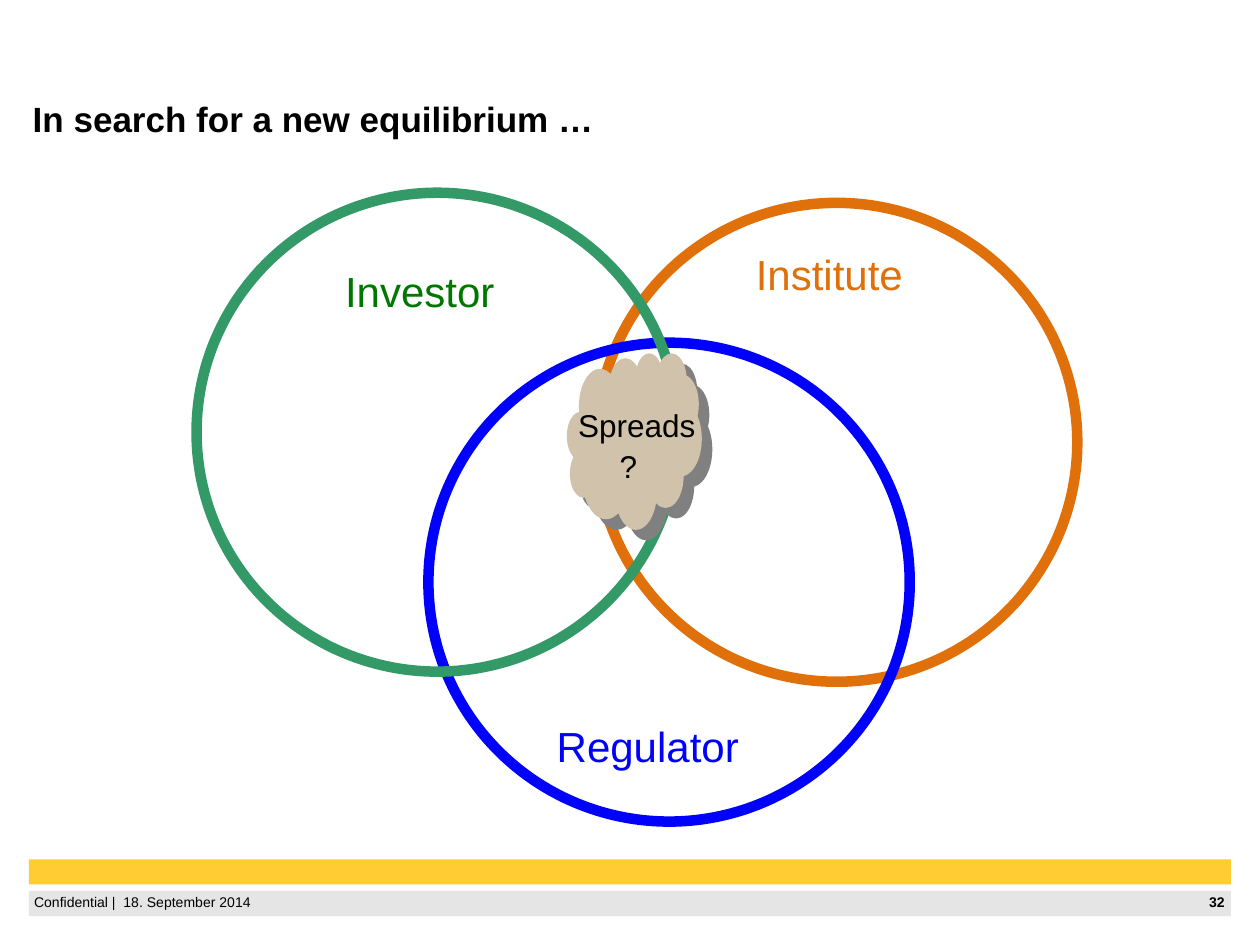
from dataclasses import dataclass

from lxml.etree import SubElement
from pptx import Presentation
from pptx.dml.color import RGBColor
from pptx.enum.shapes import MSO_SHAPE
from pptx.enum.text import MSO_ANCHOR, MSO_AUTO_SIZE, PP_ALIGN
from pptx.oxml.ns import qn
from pptx.util import Inches, Pt


@dataclass(frozen=True)
class Theme:
    """Fonts, type sizes and colours of the slide."""
    font: str = "Arial"
    title_size: int = 20
    label_size: int = 24
    cloud_size: int = 18
    footer_size: int = 8
    ring_width: int = 6
    line_spacing: float = 1.1
    text: str = "000000"
    investor_ring: str = "339966"
    investor_text: str = "007700"
    institute: str = "E0700A"
    regulator: str = "0000FF"
    cloud: str = "D1C3AB"
    cloud_shadow: str = "808080"
    accent_bar: str = "FFCC33"
    footer_bar: str = "E5E5E5"


THEME = Theme()
SLIDE_WIDTH, SLIDE_HEIGHT = Inches(10), Inches(7.5)
RING_SIZE = (38.2, 50.67)
BAR_SIZE = (95.4, 2.67)


def place(left, top, width, height):
    """Turn percentages of the slide into a position and size."""
    return (int(SLIDE_WIDTH * left / 100), int(SLIDE_HEIGHT * top / 100),
            int(SLIDE_WIDTH * width / 100), int(SLIDE_HEIGHT * height / 100))


def write(frame, text, size, color, bold=False, align=PP_ALIGN.LEFT):
    """Write one formatted run and return its paragraph."""
    frame.word_wrap = True
    frame.auto_size = MSO_AUTO_SIZE.NONE
    paragraph = frame.paragraphs[0]
    paragraph.alignment = align
    run = paragraph.add_run()
    run.text = text
    run.font.name = THEME.font
    run.font.size = Pt(size)
    run.font.bold = bold
    run.font.color.rgb = RGBColor.from_string(color)
    return paragraph


def add_title(slide, text):
    """Place and format the title placeholder."""
    title = slide.shapes.title
    title.left, title.top, title.width, title.height = place(1.6, 9.2, 96.6, 7.33)
    title.text_frame.vertical_anchor = MSO_ANCHOR.TOP
    paragraph = write(title.text_frame, text, THEME.title_size, THEME.text, bold=True)
    paragraph.line_spacing = THEME.line_spacing


def add_label(slide, box, text, size, color):
    """Add a label whose wrapped lines hang to the right."""
    label = slide.shapes.add_textbox(*place(*box))
    paragraph = write(label.text_frame, text, size, color)
    paragraph.line_spacing = THEME.line_spacing
    properties = paragraph._p.get_or_add_pPr()
    properties.set("marL", str(Inches(0.33)))
    properties.set("indent", str(Inches(-0.33)))


def add_footer_text(slide, box, text, bold, align):
    """Add a line of footer text without margins."""
    footer = slide.shapes.add_textbox(*place(*box))
    frame = footer.text_frame
    frame.margin_left = frame.margin_right = frame.margin_top = frame.margin_bottom = 0
    frame.vertical_anchor = MSO_ANCHOR.MIDDLE
    write(frame, text, THEME.footer_size, THEME.text, bold, align)


def add_filled_shape(slide, kind, box, color):
    """Add a filled shape without outline or shadow."""
    shape = slide.shapes.add_shape(kind, *place(*box))
    shape.shadow.inherit = False
    shape.fill.solid()
    shape.fill.fore_color.rgb = RGBColor.from_string(color)
    shape.line.fill.background()
    return shape


def add_ring(slide, left, top, color):
    """Add an unfilled circle with a thick outline."""
    ring = slide.shapes.add_shape(MSO_SHAPE.OVAL, *place(left, top, *RING_SIZE))
    ring.shadow.inherit = False
    ring.fill.background()
    ring.line.color.rgb = RGBColor.from_string(color)
    ring.line.width = Pt(THEME.ring_width)


def add_shadow(shape, color):
    """Cast a hard shadow down and to the right."""
    effects = shape._element.spPr.find(qn("a:effectLst"))
    shadow = SubElement(effects, qn("a:outerShdw"), blurRad="0", dist=str(Pt(8.5)),
                        dir=str(45 * 60000), algn="ctr", rotWithShape="0")
    SubElement(shadow, qn("a:srgbClr"), val=color)


def main():
    """Build the slide and save it."""
    presentation = Presentation()
    presentation.slide_width, presentation.slide_height = SLIDE_WIDTH, SLIDE_HEIGHT
    slide = presentation.slides.add_slide(presentation.slide_layouts[5])

    for top, color in ((90.93, THEME.accent_bar), (94.27, THEME.footer_bar)):
        add_filled_shape(slide, MSO_SHAPE.RECTANGLE, (2.3, top, *BAR_SIZE), color)
    add_footer_text(slide, (90.6, 94.53, 6.6, 1.73), "32", True, PP_ALIGN.RIGHT)
    add_footer_text(slide, (2.7, 94.53, 86.5, 1.73),
                    "Confidential |  18. September 2014", False, PP_ALIGN.LEFT)
    add_title(slide, "In search for a new equilibrium …")

    for left, top, color in ((47.3, 21.47, THEME.institute),
                             (34, 36.27, THEME.regulator),
                             (15.6, 20.4, THEME.investor_ring)):
        add_ring(slide, left, top, color)
    for text, left, top, width, color in (
            ("Institute", 59, 25.07, 14.5, THEME.institute),
            ("Investor", 26.4, 26.93, 14.5, THEME.investor_text),
            ("Regulator", 43.2, 75.07, 17.6, THEME.regulator)):
        add_label(slide, (left, top, width, 6.93), text, THEME.label_size, color)

    cloud = add_filled_shape(slide, MSO_SHAPE.CLOUD, (45, 37.33, 10.7, 18.67), THEME.cloud)
    add_shadow(cloud, THEME.cloud_shadow)
    add_label(slide, (44.9, 41.87, 13, 11.6), "Spreads ?", THEME.cloud_size, THEME.text)
    presentation.save("out.pptx")


if __name__ == "__main__":
    main()
